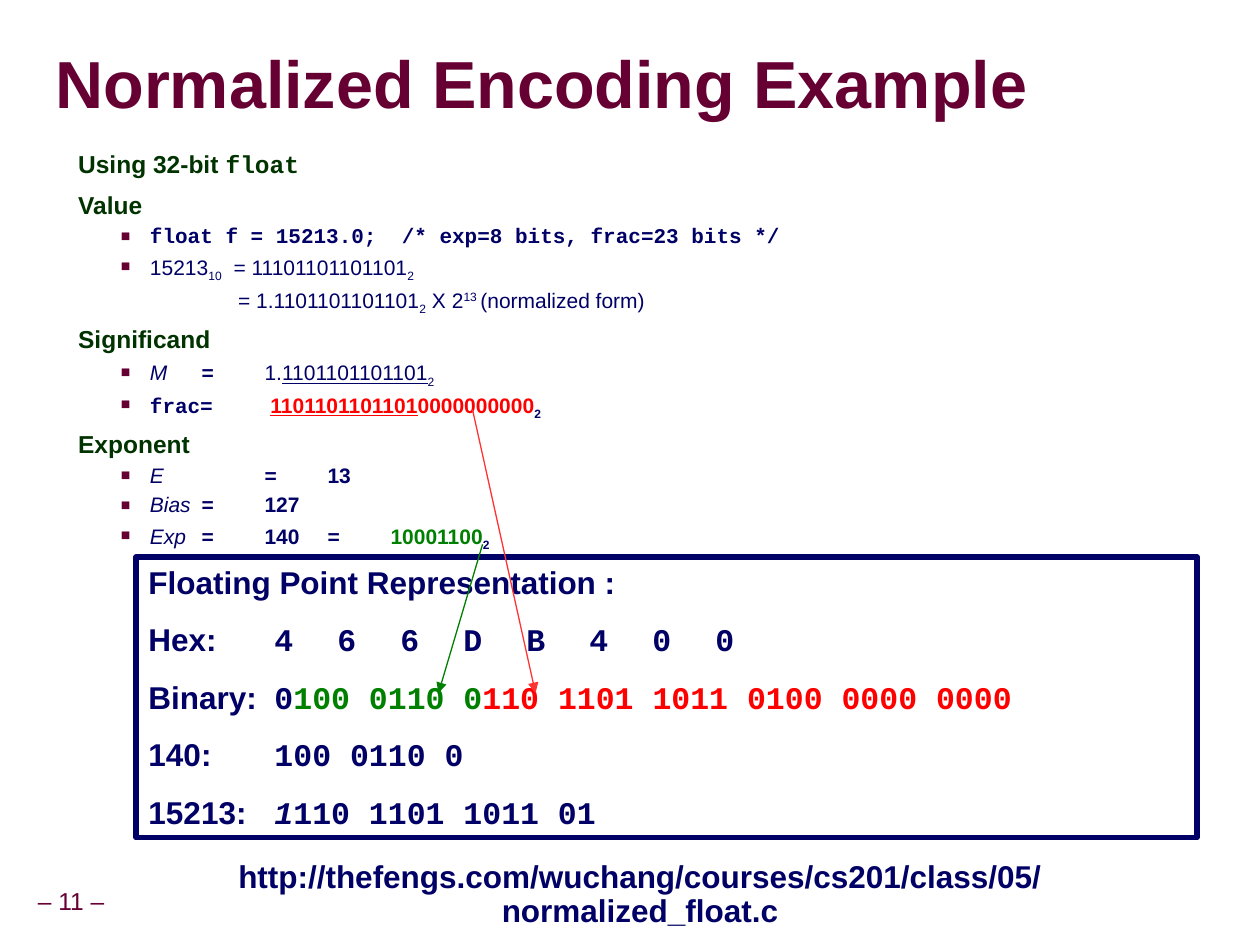
from dataclasses import dataclass

from lxml.etree import SubElement
from pptx import Presentation
from pptx.dml.color import RGBColor
from pptx.enum.shapes import MSO_CONNECTOR, MSO_SHAPE
from pptx.enum.text import MSO_ANCHOR, MSO_AUTO_SIZE, PP_ALIGN
from pptx.oxml.ns import qn
from pptx.util import Inches, Pt

MAROON = RGBColor(0x66, 0x00, 0x33)
NAVY = RGBColor(0x00, 0x00, 0x66)
DARK_GREEN = RGBColor(0x00, 0x33, 0x00)
GREEN = RGBColor(0x00, 0x80, 0x00)
RED = RGBColor(0xFF, 0x00, 0x00)
LIGHT_RED = RGBColor(0xFF, 0x33, 0x33)
WHITE = RGBColor(0xFF, 0xFF, 0xFF)
SANS, MONO = "Arial", "Courier New"
HALF_INCH_TABS = tuple(0.5 * k for k in range(1, 8))
HEX_TABS = tuple(1.3 + 0.75 * k for k in range(8))


@dataclass(frozen=True)
class Style:
    size: float
    color: RGBColor
    bold: bool = True
    margin: float = 0
    indent: float = 0
    line: float = 1.0
    before: float = 0
    level: int = 0
    bullet: bool = False
    align: PP_ALIGN = PP_ALIGN.LEFT


@dataclass(frozen=True)
class Line:
    style: Style
    runs: tuple
    tabs: tuple = ()


@dataclass(frozen=True)
class Arrow:
    start: tuple
    end: tuple
    color: RGBColor


TITLE = Style(38, MAROON, line=0.87)
HEAD = Style(14, DARK_GREEN, margin=0.24, indent=-0.22, line=0.85, before=8.8)
ITEM = Style(12, NAVY, margin=0.59, indent=-0.23, line=0.9, before=3.8, level=1, bullet=True)
CONTINUED = Style(12, NAVY, margin=1.29, line=0.9, before=3.8, level=1)
CODE = Style(18, NAVY, before=11.2)
ADDRESS = Style(18, NAVY, line=0.9, align=PP_ALIGN.CENTER)
NUMBER = Style(14, MAROON, bold=False, line=0.9, align=PP_ALIGN.CENTER)

PLAIN = dict(bold=False)
NAME = dict(bold=False, italic=True)
CODE_FONT = dict(font=MONO)
SUB = dict(baseline=-25)
PLAIN_SUB = dict(bold=False, baseline=-25)


def item(*runs) -> Line:
    return Line(ITEM, runs, HALF_INCH_TABS)


BODY = [
    Line(HEAD, (("Using 32-bit ", {}), ("float", CODE_FONT))),
    Line(HEAD, (("Value", {}),)),
    item(("float f = 15213.0;  /* exp=8 bits, frac=23 bits */", CODE_FONT)),
    item(("15213", PLAIN), ("10", PLAIN_SUB), ("  = 11101101101101", PLAIN), ("2", PLAIN_SUB)),
    Line(CONTINUED, (("= 1.1101101101101", PLAIN), ("2", PLAIN_SUB), (" X 2", PLAIN),
                     ("13 ", dict(bold=False, baseline=30)), ("(normalized form)", PLAIN))),
    Line(HEAD, (("Significand", {}),)),
    item(("M", NAME), (" \t= \t", {}), ("1.", PLAIN),
         ("1101101101101", dict(bold=False, underline=True)), ("2", PLAIN_SUB)),
    item(("frac", CODE_FONT), ("= \t ", {}),
         ("1101101101101", dict(color=RED, underline=True)),
         ("0000000000", dict(color=RED)), ("2", SUB)),
    Line(HEAD, (("Exponent", {}),)),
    item(("E\t", NAME), (" \t= \t13", {})),
    item(("Bias", NAME), (" \t= \t127", {})),
    item(("Exp", NAME), (" \t= \t140 \t=\t", {}), ("10001100", dict(color=GREEN)), ("2", SUB)),
]

REPRESENTATION = [
    Line(CODE, (("Floating Point Representation :", {}),)),
    Line(CODE, (("Hex:", {}), ("\t" + "\t".join("466DB400"), CODE_FONT)), HEX_TABS),
    Line(CODE, (("Binary:\t", {}), ("0", CODE_FONT),
                ("100 0110 0", dict(font=MONO, color=GREEN)),
                ("110 1101 1011 0100 0000 0000", dict(font=MONO, color=RED))), (1.0,)),
    Line(CODE, (("140:", {}), ("\t100 0110 0", CODE_FONT)), (1.15,)),
    Line(CODE, (("15213:\t", {}), ("1", dict(font=MONO, italic=True)),
                ("110 1101 1011 01", CODE_FONT)), (2.5,)),
]

ARROWS = [
    Arrow((3.75, 3.25), (4.25, 5.5), LIGHT_RED),
    Arrow((3.83, 4.32), (3.48, 5.5), GREEN),
]


def add_text(p, text: str, *, size: float, color: RGBColor, font: str = SANS, bold: bool = True,
             italic: bool = False, underline: bool = False, baseline: int = 0) -> None:
    r = p.add_run()
    r.text = text
    f = r.font
    f.name, f.size, f.bold, f.italic = font, Pt(size), bold, italic
    f.color.rgb = color
    if underline:
        f.underline = True
    if baseline:
        r._r.get_or_add_rPr().set("baseline", str(baseline * 1000))


def format_paragraph(p, style: Style, tabs: tuple) -> None:
    p.level, p.alignment = style.level, style.align
    p.line_spacing, p.space_before, p.space_after = style.line, Pt(style.before), Pt(0)
    pPr = p._p.get_or_add_pPr()
    pPr.set("marL", str(Inches(style.margin)))
    pPr.set("indent", str(Inches(style.indent)))
    if style.bullet:
        SubElement(SubElement(pPr, qn("a:buClr")), qn("a:srgbClr"), val=str(MAROON))
        SubElement(pPr, qn("a:buSzPct"), val="75000")
        SubElement(pPr, qn("a:buFont"), typeface=SANS)
        SubElement(pPr, qn("a:buChar"), char="■")
    else:
        SubElement(pPr, qn("a:buNone"))
    if tabs:
        tab_list = SubElement(pPr, qn("a:tabLst"))
        for stop in tabs:
            SubElement(tab_list, qn("a:tab"), pos=str(Inches(stop)), algn="l")


def fill_text(sp, lines: list[Line], insets: tuple = (0.1, 0.05),
              anchor: MSO_ANCHOR = MSO_ANCHOR.TOP, wrap: bool = True) -> None:
    tf = sp.text_frame
    tf.auto_size, tf.word_wrap, tf.vertical_anchor = MSO_AUTO_SIZE.NONE, wrap, anchor
    tf.margin_left = tf.margin_right = Inches(insets[0])
    tf.margin_top = tf.margin_bottom = Inches(insets[1])
    for i, line in enumerate(lines):
        p = tf.add_paragraph() if i else tf.paragraphs[0]
        style = line.style
        format_paragraph(p, style, line.tabs)
        for text, changes in line.runs:
            add_text(p, text, **{"size": style.size, "color": style.color,
                                 "bold": style.bold, **changes})


def place(sp, *box: float) -> None:
    sp.left, sp.top, sp.width, sp.height = map(Inches, box)


def add_arrow(s, arrow: Arrow) -> None:
    c = s.shapes.add_connector(MSO_CONNECTOR.STRAIGHT, *map(Inches, arrow.start + arrow.end))
    c.line.color.rgb = arrow.color
    c.line.width = Pt(0.75)
    SubElement(c.line._get_or_add_ln(), qn("a:tailEnd"), type="triangle")
    SubElement(c._element.spPr, qn("a:effectLst"))


def add_label(s, text: str, style: Style, box: tuple, **options) -> None:
    sp = s.shapes.add_textbox(*map(Inches, box))
    fill_text(sp, [Line(style, ((text, {}),))], insets=(0.05, 0.05), **options)


def main() -> None:
    prs = Presentation()
    prs.slide_width, prs.slide_height = Inches(10), Inches(7.5)
    s = prs.slides.add_slide(prs.slide_layouts[1])
    s.background.fill.solid()
    s.background.fill.fore_color.rgb = WHITE

    title, body = s.placeholders
    place(title, 0.44, 0.27, 9.53, 0.85)
    fill_text(title, [Line(TITLE, (("Normalized Encoding Example", {}),))],
              insets=(0, 0), anchor=MSO_ANCHOR.MIDDLE)
    place(body, 0.5, 1.17, 9.03, 3.23)
    fill_text(body, BODY)

    frame = s.shapes.add_shape(MSO_SHAPE.RECTANGLE, *map(Inches, (1.08, 4.42, 8.42, 2.23)))
    frame.shadow.inherit = False
    frame.fill.background()
    frame.line.color.rgb = NAVY
    frame.line.width = Pt(3)
    fill_text(frame, REPRESENTATION)

    add_label(s, "http://thefengs.com/wuchang/courses/cs201/class/05/normalized_float.c",
              ADDRESS, (0.83, 6.79, 8.5, 0.6))
    add_label(s, "– 11 –", NUMBER, (-0.09, 6.99, 1.31, 0.34),
              anchor=MSO_ANCHOR.MIDDLE, wrap=False)
    for arrow in ARROWS:
        add_arrow(s, arrow)
    prs.save("out.pptx")


if __name__ == "__main__":
    main()
